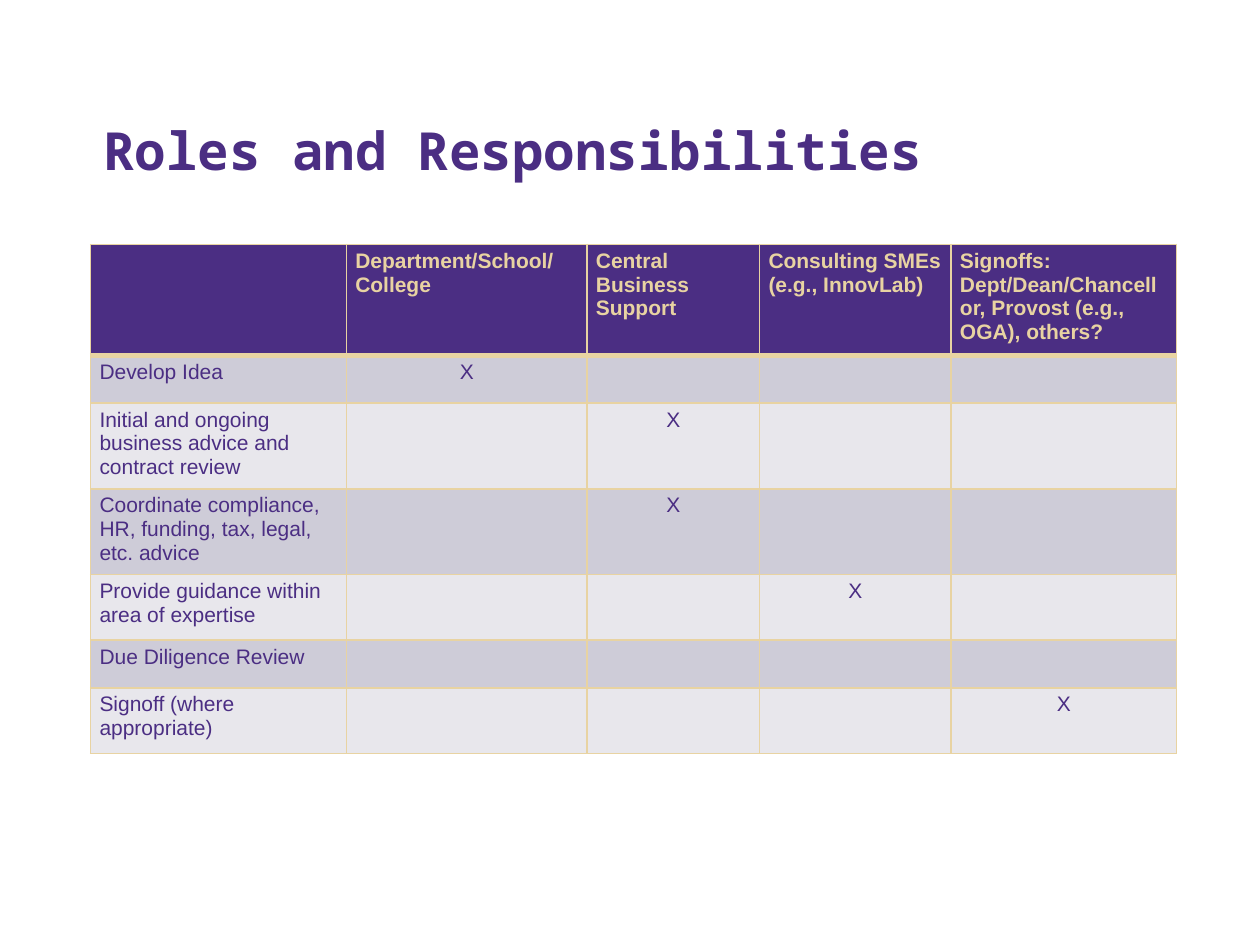
from lxml import etree
from pptx import Presentation
from pptx.dml.color import RGBColor
from pptx.enum.text import MSO_ANCHOR, PP_ALIGN
from pptx.oxml.ns import qn
from pptx.util import Inches, Pt

BOTTOM = MSO_ANCHOR.BOTTOM
LEFT, CENTER = PP_ALIGN.LEFT, PP_ALIGN.CENTER

COLORS = {"purple": "4B2E83", "gold": "E8D3A2", "dark_band": "CECCD8", "light_band": "E8E7EC"}

HEADERS = [
    "",
    "Department/School/ College",
    "Central Business Support",
    "Consulting SMEs (e.g., InnovLab)",
    "Signoffs: Dept/Dean/Chancellor, Provost (e.g., OGA), others?",
]
TASKS = [
    ("Develop Idea", 1),
    ("Initial and ongoing business advice and contract review", 2),
    ("Coordinate compliance, HR, funding, tax, legal, etc. advice", 2),
    ("Provide guidance within area of expertise", 3),
    ("Due Diligence Review", None),
    ("Signoff (where appropriate)", 4),
]
COL_WIDTHS = [2.03, 1.91, 1.37, 1.52, 1.79]
ROW_HEIGHTS = [0.81, 0.36, 0.68, 0.68, 0.52, 0.36, 0.52]


def rgb(name):
    """Return the named colour."""
    return RGBColor.from_string(COLORS[name])


def write(tf, text, size=12, font="Arial", color="purple", bold=False, align=LEFT):
    """Write one formatted paragraph into a text frame."""
    p = tf.paragraphs[0]
    p.alignment = align
    r = p.add_run()
    r.text = text
    r.font.size = Pt(size)
    r.font.name = font
    r.font.bold = bold
    r.font.color.rgb = rgb(color)


def set_borders(cell, **widths):
    """Draw gold cell borders, given as side=points."""
    tcPr = cell._tc.get_or_add_tcPr()
    for i, (side, width) in enumerate(widths.items()):
        ln = etree.Element(qn(f"a:ln{side}"), w=str(Pt(width)))
        fill = etree.SubElement(ln, qn("a:solidFill"))
        etree.SubElement(fill, qn("a:srgbClr"), val=COLORS["gold"])
        tcPr.insert(i, ln)


def format_cell(cell, fill, top=1, bottom=1):
    """Set the margins, fill and borders of a cell."""
    cell.margin_left = cell.margin_right = Inches(0.07)
    cell.margin_top = cell.margin_bottom = Inches(0.04)
    cell.fill.solid()
    cell.fill.fore_color.rgb = rgb(fill)
    set_borders(cell, L=1, R=1, T=top, B=bottom)


def add_title(s, text):
    """Add the slide title."""
    box = s.shapes.add_textbox(Inches(0.72), Inches(0.41), Inches(8.96), Inches(1.08))
    tf = box.text_frame
    tf.word_wrap = True
    tf.vertical_anchor = BOTTOM
    write(tf, text, size=30, font="Noto Sans Mono", bold=True)


def add_roles_table(s):
    """Add the table that marks who is responsible for each task."""
    table = s.shapes.add_table(
        len(ROW_HEIGHTS), len(COL_WIDTHS), Inches(0.72), Inches(1.94),
        Inches(sum(COL_WIDTHS)), Inches(sum(ROW_HEIGHTS)),
    ).table
    for col, width in zip(table.columns, COL_WIDTHS):
        col.width = Inches(width)
    for row, height in zip(table.rows, ROW_HEIGHTS):
        row.height = Inches(height)

    for c, header in enumerate(HEADERS):
        cell = table.cell(0, c)
        format_cell(cell, "purple", bottom=3)
        if header:
            write(cell.text_frame, header, color="gold", bold=True)

    for r, (task, owner) in enumerate(TASKS, start=1):
        for c in range(len(HEADERS)):
            cell = table.cell(r, c)
            format_cell(cell, "dark_band" if r % 2 else "light_band", top=3 if r == 1 else 1)
            if c == 0:
                write(cell.text_frame, task)
            elif c == owner:
                write(cell.text_frame, "X", align=CENTER)


def main():
    """Build and save the slide."""
    prs = Presentation()
    prs.slide_width, prs.slide_height = Inches(10), Inches(7.5)
    s = prs.slides.add_slide(prs.slide_layouts[6])
    add_title(s, "Roles and Responsibilities")
    add_roles_table(s)
    prs.save("out.pptx")


if __name__ == "__main__":
    main()
